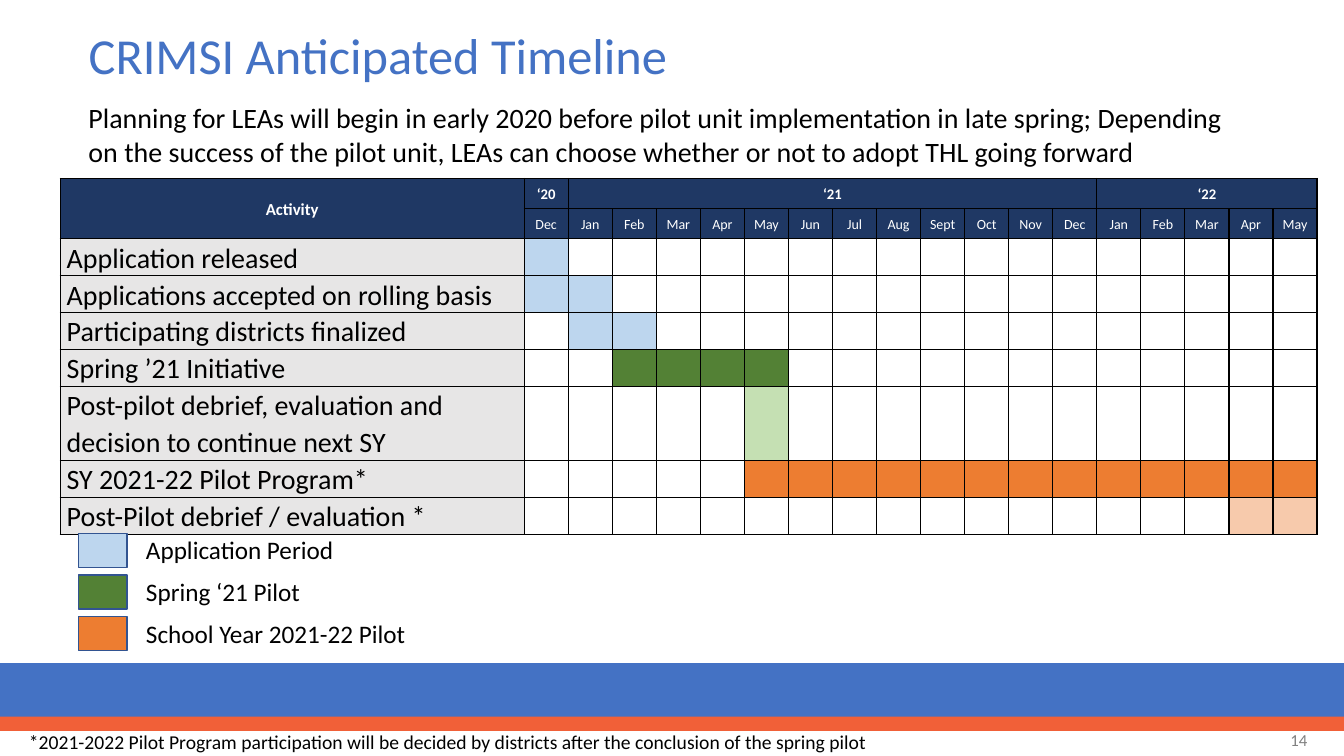
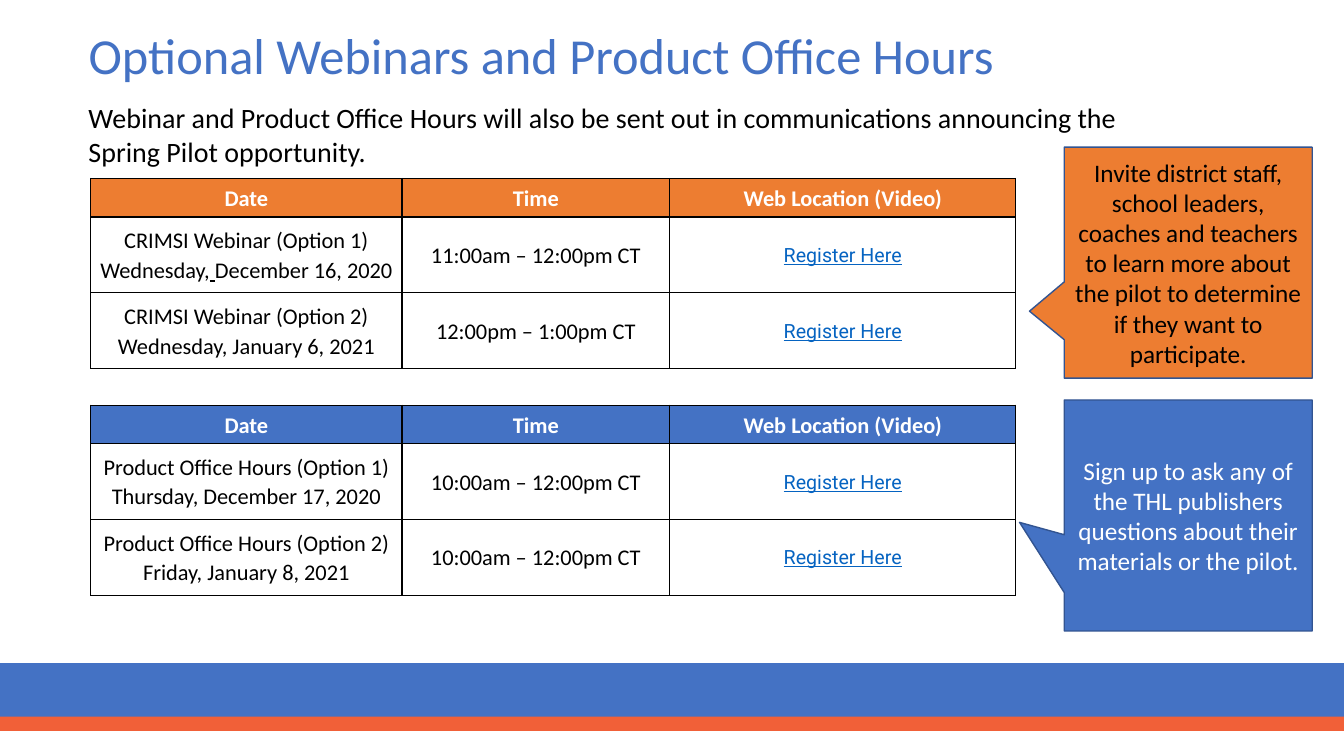
from lxml import etree
from pptx import Presentation
from pptx import util as u
from pptx.dml.color import RGBColor
from pptx.enum import shapes, text
from pptx.oxml import ns

HUES = {
    "white": "FFFFFF", "black": "000000", "gray": "808080", "pale": "E7E6E6",
    "blue": "4472C4", "navy": "1F3864", "edge": "325491", "link": "0563C1",
    "red": "F16038", "orange": "ED7D31", "peach": "F7CAAC",
    "sky": "BDD6EE", "green": "538135", "mint": "C5E0B3",
}
LEFT, MID, RIGHT = text.PP_ALIGN.LEFT, text.PP_ALIGN.CENTER, text.PP_ALIGN.RIGHT
TOP, HALF = text.MSO_ANCHOR.TOP, text.MSO_ANCHOR.MIDDLE
RECT = shapes.MSO_SHAPE.RECTANGLE
CALL = shapes.MSO_SHAPE.RECTANGULAR_CALLOUT
WIDE, HIGH = 33.87, 19.05
EDGE = 1.98  # left edge of title, lead and legend


def hue(name):
    return RGBColor.from_string(HUES[name])


def place(*box):
    return [u.Cm(n) for n in box]


class Deck:
    """Holds the style and the current slide."""

    def __init__(self):
        self.prs = Presentation()
        self.prs.slide_width, self.prs.slide_height = place(WIDE, HIGH)
        self.slide = None

    def page(self, title, lead, width):
        """Start a slide with its title, lead text and bottom bands."""
        self.slide = self.prs.slides.add_slide(self.prs.slide_layouts[5])
        head = self.slide.shapes.title
        head.left, head.top, head.width, head.height = place(EDGE, 0.43, 30.89, 2.08)
        self.fit(head.text_frame, title, 36, "blue", anchor=HALF, space=0.9)
        self.shape(RECT, (0, 16.71, WIDE, 1.47), "blue")
        self.shape(RECT, (0, 18.06, WIDE, 0.36), "red")
        self.label((EDGE, 2.41, width, 1.96), lead, 20)

    def fit(self, frame, words, size, color="black", align=LEFT, anchor=TOP,
            space=1.0, bold=False, face="Calibri", under=False):
        """Fill a frame: lines are paragraphs, text between bars is underlined."""
        frame.word_wrap = True
        frame.vertical_anchor = anchor
        for i, line in enumerate(words.split("\n")):
            para = frame.add_paragraph() if i else frame.paragraphs[0]
            para.alignment, para.line_spacing = align, space
            font = para.font
            font.name, font.size, font.bold = face, u.Pt(size), bold
            font.color.rgb, font.underline = hue(color), under
            for j, part in enumerate(line.split("|")):
                run = para.add_run()
                run.text = part
                if j % 2:
                    run.font.underline = True

    def label(self, box, words, size, color="black", **style):
        item = self.slide.shapes.add_textbox(*place(*box))
        self.fit(item.text_frame, words, size, color, **style)

    def shape(self, kind, box, fill, line=None):
        item = self.slide.shapes.add_shape(kind, *place(*box))
        item.shadow.inherit = False
        item.fill.solid()
        item.fill.fore_color.rgb = hue(fill)
        if line:
            item.line.color.rgb = hue(line)
            item.line.width = u.Pt(1)
        else:
            item.line.fill.background()
        return item

    def callout(self, top, words, fill, color, tip):
        item = self.shape(CALL, (26.82, top, 6.25, 5.82), fill, "edge")
        item.adjustments[0], item.adjustments[1] = tip
        self.fit(item.text_frame, words, 18, color, align=MID, anchor=HALF)

    def table(self, left, top, cols, rows):
        frame = self.slide.shapes.add_table(
            len(rows), len(cols), *place(left, top, sum(cols), sum(rows)))
        grid = frame.table
        grid.first_row = grid.horz_banding = False
        for col, width in zip(grid.columns, cols):
            col.width = u.Cm(width)
        for row, height in zip(grid.rows, rows):
            row.height = u.Cm(height)
        for cell in grid.iter_cells():
            self.border(cell)
            self.paint(cell, "white")
        return grid

    def border(self, cell):
        cell.margin_top = cell.margin_bottom = 0
        cell.margin_left = cell.margin_right = u.Cm(0.16)
        props = cell._tc.get_or_add_tcPr()
        for side in "LRTB":
            line = etree.SubElement(props, ns.qn(f"a:ln{side}"), w=str(u.Pt(1)))
            fill = etree.SubElement(line, ns.qn("a:solidFill"))
            etree.SubElement(fill, ns.qn("a:srgbClr"), val=HUES["black"])

    def paint(self, cell, fill):
        cell.fill.solid()
        cell.fill.fore_color.rgb = hue(fill)

    def cell(self, cell, words, size, color="black", fill="white", align=MID, **style):
        self.paint(cell, fill)
        cell.vertical_anchor = HALF
        self.fit(cell.text_frame, words, size, color, align=align,
                 anchor=HALF, space=1.07, **style)


def plan(deck):
    """Timeline slide."""
    deck.page("CRIMSI Anticipated Timeline",
              "Planning for LEAs will begin in early 2020 before pilot unit "
              "implementation in late spring; Depending on the success of the pilot "
              "unit, LEAs can choose whether or not to adopt THL going forward", 29.51)

    # Activity, first and last month, bar colour
    tasks = [
        ("Application released", 1, 1, "sky"),
        ("Applications accepted on rolling basis", 1, 2, "sky"),
        ("Participating districts finalized", 2, 3, "sky"),
        ("Spring ’21 Initiative", 3, 6, "green"),
        ("Post-pilot debrief, evaluation and decision to continue next SY", 6, 6, "mint"),
        ("SY 2021-22 Pilot Program*", 6, 18, "orange"),
        ("Post-Pilot debrief / evaluation *", 17, 18, "peach"),
    ]
    year = "Jan Feb Mar Apr May Jun Jul Aug Sept Oct Nov Dec".split()
    months = year[-1:] + year + year[:5]
    rows = [0.76] * 2 + [0.93] * 4 + [1.86] + [0.93] * 2
    grid = deck.table(1.52, 4.5, [11.69] + [1.11] * len(months), rows)

    # Header rows
    for col, name in enumerate(months, 1):
        deck.cell(grid.cell(1, col), name, 10, "white", "navy")
    grid.cell(0, 0).merge(grid.cell(1, 0))
    deck.cell(grid.cell(0, 0), "Activity", 12, "white", "navy", bold=True)
    for name, start, end in (("‘20", 1, 1), ("‘21", 2, 13), ("‘22", 14, 18)):
        if end > start:
            grid.cell(0, start).merge(grid.cell(0, end))
        deck.cell(grid.cell(0, start), name, 10.5, "white", "navy", bold=True)

    # Bars
    for row, (name, start, end, color) in enumerate(tasks, 2):
        deck.cell(grid.cell(row, 0), name, 20, fill="pale", align=LEFT)
        for col in range(start, end + 1):
            deck.paint(grid.cell(row, col), color)

    # Legend
    keys = [("Application Period", "sky"), ("Spring ‘21 Pilot", "green"),
            ("School Year 2021-22 Pilot", "orange")]
    for i, (name, color) in enumerate(keys):
        top = 13.44 + 1.05 * i
        deck.shape(RECT, (EDGE, top, 1.22, 0.86), color, "edge")
        deck.label((3.43, top - 0.09, 16.94, 1.02), name, 18)

    # Footer
    deck.label((0.48, 18.26, 30.25, 0.86),
               "*2021-2022 Pilot Program participation will be decided by districts "
               "after the conclusion of the spring pilot", 14)
    deck.label((25.58, 18.14, 7.62, 1.02), "14", 12, "gray", align=RIGHT, anchor=HALF)


def hours(deck):
    """Webinar slide."""
    deck.page("Optional Webinars and Product Office Hours",
              "Webinar and Product Office Hours will also be sent out in "
              "communications announcing the Spring Pilot opportunity.", 28.3)

    # Top, header colour, then date and time of each session
    lists = [
        (4.5, "orange", [
            ("CRIMSI Webinar (Option 1)\nWednesday,| |December 16, 2020",
             "11:00am – 12:00pm CT"),
            ("CRIMSI Webinar (Option 2)\nWednesday, January 6, 2021",
             "12:00pm – 1:00pm CT")]),
        (10.21, "blue", [
            ("Product Office Hours (Option 1)\nThursday, December 17, 2020",
             "10:00am – 12:00pm CT"),
            ("Product Office Hours (Option 2)\nFriday, January 8, 2021",
             "10:00am – 12:00pm CT")]),
    ]
    for top, color, dates in lists:
        grid = deck.table(2.29, top, [7.84, 6.75, 8.72], [0.97, 1.91, 1.91])
        for col, name in enumerate(("Date", "Time", "Web Location (Video)")):
            deck.cell(grid.cell(0, col), name, 16, "white", color, bold=True)
        for row, (date, time) in enumerate(dates, 1):
            deck.cell(grid.cell(row, 0), date, 16)
            deck.cell(grid.cell(row, 1), time, 16)
            deck.cell(grid.cell(row, 2), "Register Here", 14, "link",
                      face="Roboto", under=True)

    # Callouts
    deck.callout(3.71, "Invite district staff, school leaders, coaches and teachers to "
                 "learn more about the pilot to determine if they want to participate.",
                 "orange", "black", (-0.64, 0.21))
    deck.callout(10.08, "Sign up to ask any of the THL publishers questions about "
                 "their materials or the pilot.", "blue", "white", (-0.68, 0.03))


def main():
    deck = Deck()
    plan(deck)
    hours(deck)
    deck.prs.save("out.pptx")


if __name__ == "__main__":
    main()
